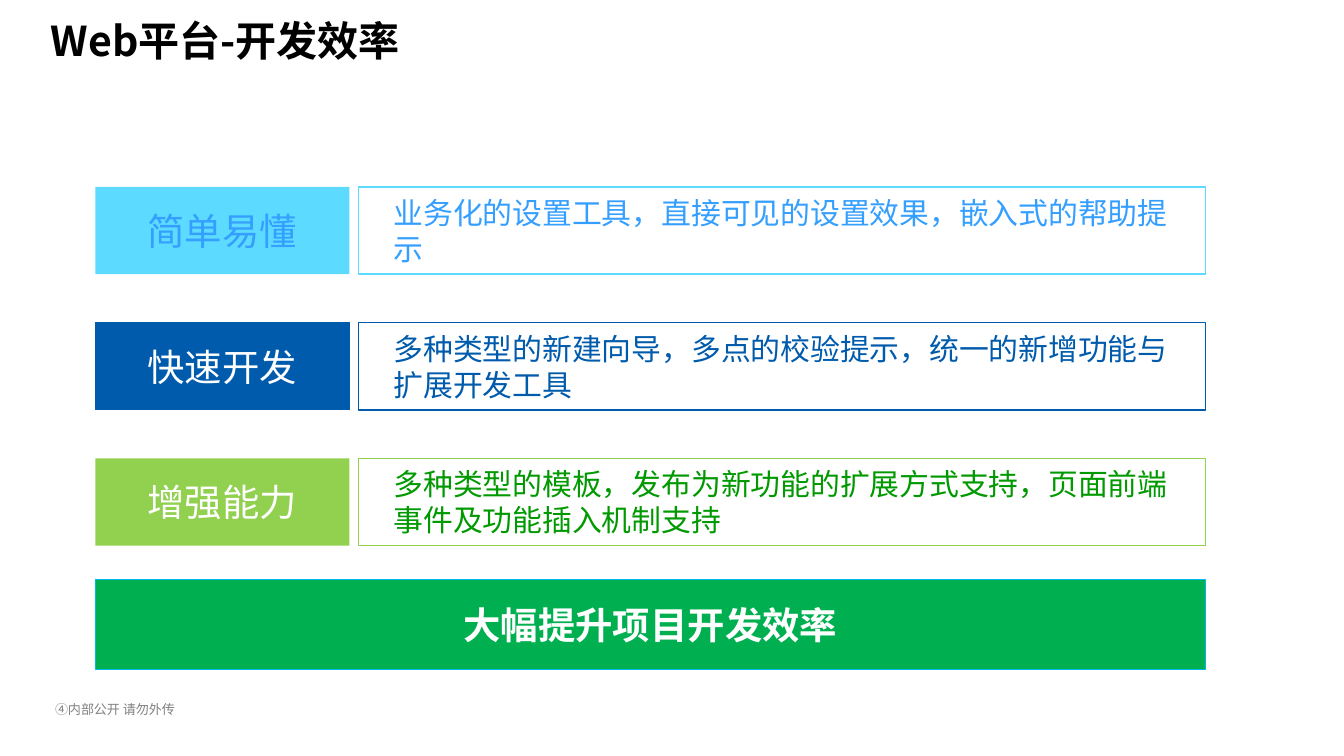
from pptx import Presentation
from pptx.dml.color import RGBColor
from pptx.enum.shapes import MSO_SHAPE as SHAPE
from pptx.enum.text import MSO_ANCHOR as ANCHOR, PP_ALIGN as ALIGN
from pptx.oxml.ns import qn
from pptx.util import Inches, Pt
from lxml import etree

FONT = "Noto Sans CJK SC"
COLORS = {
    "black": "000000", "white": "FFFFFF", "gray": "808080",
    "sky": "5CDAFF", "sky_text": "349FFF", "blue": "005BAC",
    "lime": "92D050", "green_text": "009900",
    "green": "00B050", "cyan": "00B9EF",
}
ROWS = [
    ("简单易懂", "业务化的设置工具，直接可见的设置效果，嵌入式的帮助提示",
     "sky", "sky_text", "sky_text", None),
    ("快速开发", "多种类型的新建向导，多点的校验提示，统一的新增功能与扩展开发工具",
     "blue", "white", "blue", "blue"),
    ("增强能力", "多种类型的模板，发布为新功能的扩展方式支持，页面前端事件及功能插入机制支持",
     "lime", "white", "green_text", None),
]


def rgb(name):
    """Return the named colour."""
    return RGBColor.from_string(COLORS[name])


def write(sp, text, size, color, bold=False, align=ALIGN.LEFT):
    """Put one styled, vertically centred paragraph in a shape."""
    tf = sp.text_frame
    tf.word_wrap = True
    tf.vertical_anchor = ANCHOR.MIDDLE
    tf.text = text
    p = tf.paragraphs[0]
    p.alignment = align
    r = p.runs[0]
    r.font.size, r.font.bold, r.font.name = Pt(size), bold, FONT
    r.font.color.rgb = rgb(color)
    etree.SubElement(r.font._element, qn("a:ea")).set("typeface", FONT)
    return tf


def add_box(s, box, fill=None, line=None, width=0.5):
    """Add a flat rectangle with optional fill and outline."""
    sp = s.shapes.add_shape(SHAPE.RECTANGLE, *map(Inches, box))
    sp.shadow.inherit = False
    if fill:
        sp.fill.solid()
        sp.fill.fore_color.rgb = rgb(fill)
    else:
        sp.fill.background()
    if line:
        sp.line.color.rgb = rgb(line)
        sp.line.width = Pt(width)
    else:
        sp.line.fill.background()
    return sp


def add_title(s, box):
    """Add the slide heading."""
    sp = s.shapes.add_textbox(*map(Inches, box))
    write(sp, "Web平台-开发效率", 22, "black", True)


def add_row(s, box, row):
    """Add a coloured heading and its outlined description."""
    left, top, width, height = box
    heading, detail, fill, heading_color, detail_color, edge = row
    head_w, gap = 1.89, 0.07
    sp = add_box(s, (left, top, head_w, height), fill, edge)
    write(sp, heading, 20, heading_color, align=ALIGN.CENTER)
    offset = head_w + gap
    sp = add_box(s, (left + offset, top, width - offset, height), line=fill, width=0.75)
    tf = write(sp, detail, 16, detail_color)
    tf.margin_left = Inches(0.26)


def add_summary(s, box):
    """Add the concluding bar."""
    sp = add_box(s, box, "green", "cyan")
    write(sp, "大幅提升项目开发效率", 20, "white", True, ALIGN.CENTER)


def add_footer(s, box):
    """Add the confidentiality note."""
    sp = s.shapes.add_textbox(*map(Inches, box))
    tf = write(sp, "④内部公开 请勿外传", 7, "gray")
    tf.margin_left = tf.margin_right = Inches(0.06)
    tf.margin_top = tf.margin_bottom = Inches(0.01)
    tf.paragraphs[0].line_spacing = Pt(10.5)


def main():
    """Build and save the slide."""
    prs = Presentation()
    prs.slide_width = Inches(10)
    prs.slide_height = prs.slide_width * 9 // 16
    s = prs.slides.add_slide(prs.slide_layouts[6])
    left, width = 0.71, 8.26
    add_footer(s, (0.35, 5.13, 1.77, 0.27))
    add_title(s, (0.28, 0.02, 8.62, 0.55))
    for i, row in enumerate(ROWS):
        add_row(s, (left, 1.39 + i * 1.01, width, 0.65), row)
    add_summary(s, (left, 4.31, width, 0.67))
    prs.save("out.pptx")


if __name__ == "__main__":
    main()
